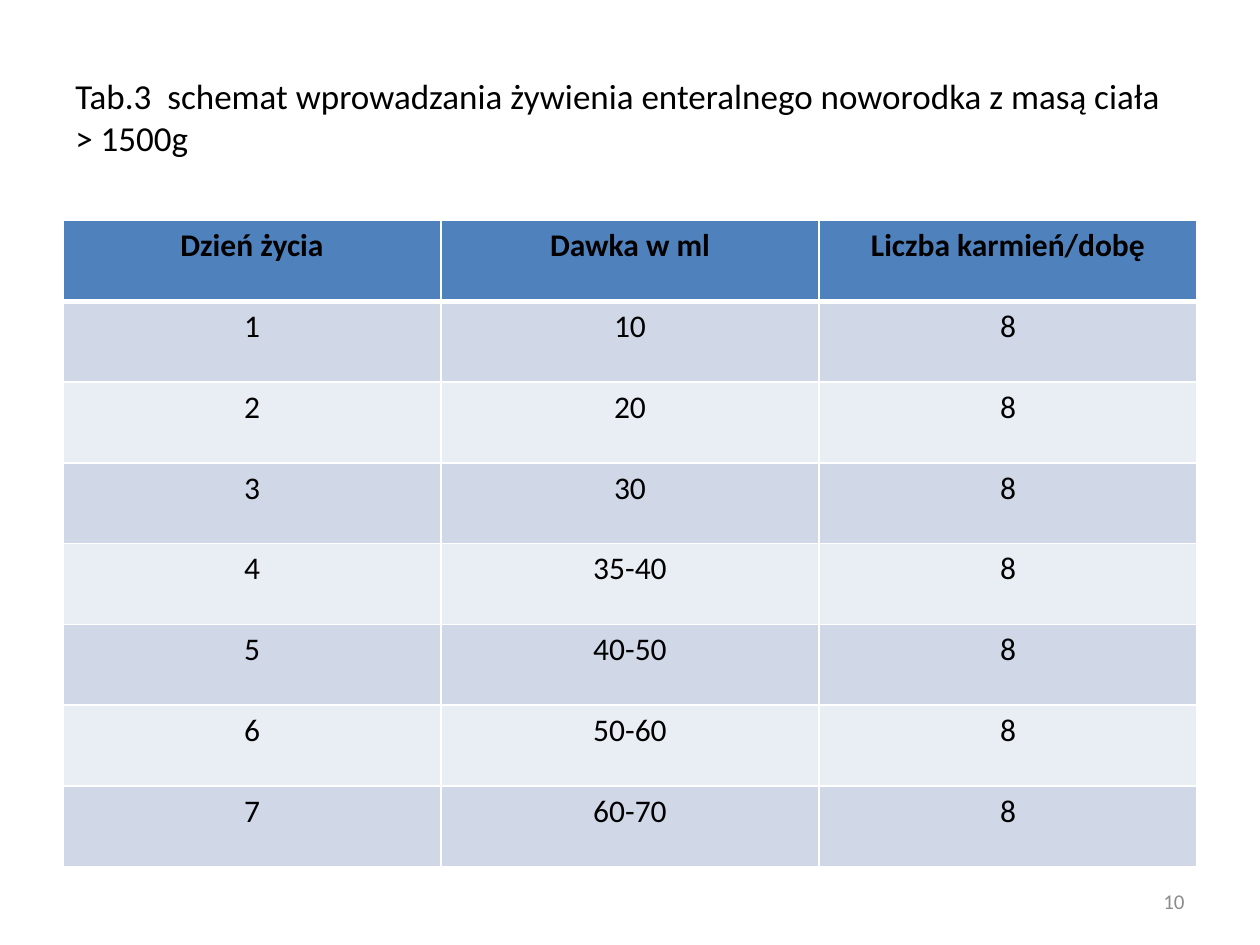
from dataclasses import dataclass

from lxml.etree import SubElement
from pptx import Presentation
from pptx.dml.color import RGBColor as RGB
from pptx.enum.text import MSO_ANCHOR as Anchor, PP_ALIGN as Align
from pptx.oxml.ns import qn
from pptx.util import Inches, Pt


@dataclass(frozen=True)
class Theme:
    font: str = "Calibri"
    ink: str = "000000"
    muted: str = "8C8C8C"
    head: str = "4F81BD"
    bands: tuple = ("D0D8E8", "E9EDF4")
    rule: str = "FFFFFF"
    title: int = 20
    body: int = 18
    small: int = 12
    thin: int = 1
    thick: int = 3


THEME = Theme()
TITLE = "Tab.3  schemat wprowadzania żywienia enteralnego noworodka z masą ciała > 1500g"
HEADS = ("Dzień życia", "Dawka w ml", "Liczba karmień/dobę")
DOSES = ("10", "20", "30", "35-40", "40-50", "50-60", "60-70")
FEEDS = "8"


def style(para, size, color, align, bold=False):
    para.alignment = align
    font = para.font
    font.name, font.size, font.bold = THEME.font, Pt(size), bold
    font.color.rgb = RGB.from_string(color)


def add_text(slide, box, text, size, color, align):
    frame = slide.shapes.add_textbox(*map(Inches, box)).text_frame
    frame.word_wrap = True
    frame.vertical_anchor = Anchor.MIDDLE
    frame.text = text
    style(frame.paragraphs[0], size, color, align)


def add_rules(cell, top, bottom):
    """Draw the cell borders; call before the fill, as the schema orders them."""
    props = cell._tc.get_or_add_tcPr()
    widths = {"L": THEME.thin, "R": THEME.thin, "T": top, "B": bottom}
    for side, width in widths.items():
        line = SubElement(props, qn(f"a:ln{side}"), w=str(Pt(width)))
        fill = SubElement(line, qn("a:solidFill"))
        SubElement(fill, qn("a:srgbClr"), val=THEME.rule)


def fill_cell(cell, text, row):
    is_head = row == 0
    add_rules(
        cell,
        top=THEME.thick if row == 1 else THEME.thin,
        bottom=THEME.thick if is_head else THEME.thin,
    )
    color = THEME.head if is_head else THEME.bands[(row - 1) % 2]
    cell.fill.solid()
    cell.fill.fore_color.rgb = RGB.from_string(color)
    cell.text = text
    style(cell.text_frame.paragraphs[0], THEME.body, THEME.ink, Align.CENTER, is_head)


def add_doses(slide, box):
    rows = [HEADS]
    rows += [(str(day), dose, FEEDS) for day, dose in enumerate(DOSES, 1)]
    table = slide.shapes.add_table(len(rows), len(HEADS), *map(Inches, box)).table
    for r, row in enumerate(rows):
        for c, text in enumerate(row):
            fill_cell(table.cell(r, c), text, r)


def main():
    deck = Presentation()
    deck.slide_width, deck.slide_height = Inches(10), Inches(7.5)
    slide = deck.slides.add_slide(deck.slide_layouts[6])
    add_text(slide, (0.5, 0.3, 9, 1.25), TITLE, THEME.title, THEME.ink, Align.LEFT)
    add_doses(slide, (0.5, 1.75, 9, 5.13))
    add_text(slide, (7.17, 6.95, 2.33, 0.4), "10", THEME.small, THEME.muted, Align.RIGHT)
    deck.save("out.pptx")


if __name__ == "__main__":
    main()
